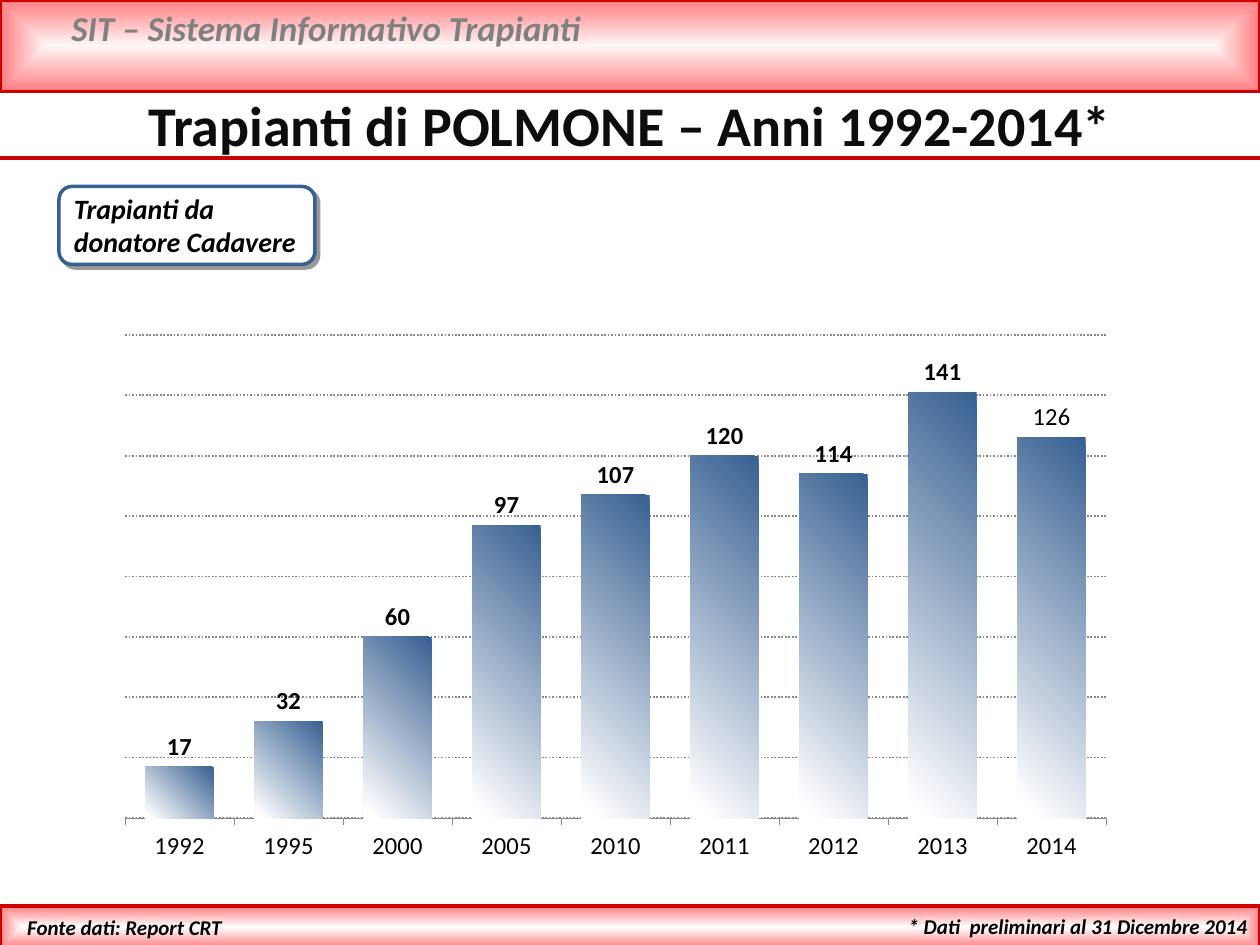
import pptx
import pptx.chart.data
import pptx.dml.color
import pptx.enum.chart
import pptx.enum.dml
import pptx.enum.shapes
import pptx.enum.text
import pptx.oxml
import pptx.oxml.ns
import pptx.util
from pptx.util import Cm, Pt

RGBColor = pptx.dml.color.RGBColor
WHITE = RGBColor(0xFF, 0xFF, 0xFF)
PALE_PINK = RGBColor(0xFF, 0xF6, 0xF6)
PINK = RGBColor(0xFF, 0x7C, 0x80)
RED = RGBColor(0xCC, 0x00, 0x00)
GREY = RGBColor(0x80, 0x80, 0x80)
AXIS_GREY = RGBColor(0x88, 0x88, 0x88)
BLACK = RGBColor(0x00, 0x00, 0x00)
TITLE_BLACK = RGBColor(0x0D, 0x0D, 0x0D)
BLUE = RGBColor(0x37, 0x60, 0x92)

FONT = "Calibri"
ALIGN = pptx.enum.text.PP_ALIGN
SHAPE = pptx.enum.shapes.MSO_SHAPE
WIDTH, HEIGHT = 25.4, 19.05

# left, top, width, height in cm; inner colour
BANDS = [
    ((0, 0, WIDTH, 1.85), PALE_PINK),
    ((0, 18.26, WIDTH, 0.86), WHITE),
]
# text, box in cm, size, colour, italic, alignment
TEXTS = [
    ("SIT – Sistema Informativo Trapianti", (1.19, 0, 22.81, 1.12), 20, GREY, True, ALIGN.LEFT),
    ("* Dati  preliminari al 31 Dicembre 2014", (14.91, 18.29, 10.49, 0.76), 12, BLACK, True, ALIGN.RIGHT),
    ("Fonte dati: Report CRT", (0.3, 18.31, 8.15, 0.76), 12, BLACK, True, ALIGN.LEFT),
    ("Trapianti di POLMONE – Anni 1992-2014*", (0, 1.7, WIDTH, 1.63), 32, TITLE_BLACK, False, ALIGN.CENTER),
    ("Trapianti da donatore Cadavere", (1.24, 3.73, 5.13, 1.63), 16, BLACK, True, ALIGN.LEFT),
]
RULE_TOP = 3.18
LABEL_FRAME = (1.19, 3.76, 5.16, 1.57)
CHART_BOX = (2.11, 6.53, 20.6, 11.07)
PLOT_AREA = {"x": 0.02, "y": 0.02, "w": 0.96, "h": 0.88}
TRANSPLANTS = {
    "1992": 17, "1995": 32, "2000": 60, "2005": 97, "2010": 107,
    "2011": 120, "2012": 114, "2013": 141, "2014": 126,
}


def in_cm(box):
    return [Cm(length) for length in box]


def element(xml, prefix="a"):
    """Parse one element, declaring its namespace prefix."""
    tag, rest = xml[1:].split(" ", 1)
    return pptx.oxml.parse_xml(f"<{tag} {pptx.oxml.ns.nsdecls(prefix)} {rest}")


def set_gradient(fill, stops):
    fill.gradient()
    for stop, (position, color) in zip(fill.gradient_stops, stops):
        stop.position = position
        stop.color.rgb = color


def set_line(line, color, width):
    line.color.rgb = color
    line.width = Pt(width)


def add_band(slide, box, inner_color):
    band = slide.shapes.add_shape(SHAPE.RECTANGLE, *in_cm(box))
    band.shadow.inherit = False
    set_gradient(band.fill, [(0, inner_color), (1, PINK)])
    linear = band._element.spPr.find(".//" + pptx.oxml.ns.qn("a:lin"))
    linear.getparent().replace(linear, element(
        '<a:path path="shape"><a:fillToRect l="50000" t="50000" r="50000" b="50000"/></a:path>'))
    set_line(band.line, RED, 2)


def add_rule(slide):
    rule = slide.shapes.add_connector(
        pptx.enum.shapes.MSO_CONNECTOR.STRAIGHT, *in_cm((0, RULE_TOP, WIDTH, RULE_TOP)))
    set_line(rule.line, RED, 2)
    rule._element.spPr.append(element("<a:effectLst />"))


def add_label_frame(slide):
    frame = slide.shapes.add_shape(SHAPE.ROUNDED_RECTANGLE, *in_cm(LABEL_FRAME))
    frame.fill.solid()
    frame.fill.fore_color.rgb = WHITE
    set_line(frame.line, BLUE, 2)
    frame._element.spPr.append(element(
        f'<a:effectLst ><a:outerShdw blurRad="0" dist="{Pt(3)}" dir="2700000" algn="tl" rotWithShape="0">'
        '<a:srgbClr val="000000"><a:alpha val="40000"/></a:srgbClr></a:outerShdw></a:effectLst>'))


def add_text(slide, text, box, size, color, italic, alignment):
    text_frame = slide.shapes.add_textbox(*in_cm(box)).text_frame
    text_frame.word_wrap = True
    text_frame.auto_size = pptx.enum.text.MSO_AUTO_SIZE.SHAPE_TO_FIT_TEXT
    paragraph = text_frame.paragraphs[0]
    paragraph.alignment = alignment
    run = paragraph.add_run()
    run.text = text
    set_font(run.font, size, color, True)
    run.font.italic = italic


def set_font(font, size, color, bold):
    font.name = FONT
    font.size = Pt(size)
    font.color.rgb = color
    font.bold = bold


def add_transplant_chart(slide):
    data = pptx.chart.data.CategoryChartData()
    data.categories = list(TRANSPLANTS)
    data.add_series("Trapianti", list(TRANSPLANTS.values()))
    chart = slide.shapes.add_chart(
        pptx.enum.chart.XL_CHART_TYPE.COLUMN_CLUSTERED, *in_cm(CHART_BOX), data).chart
    chart.has_legend = False
    chart.has_title = False
    set_font(chart.font, 10, BLACK, False)
    format_axes(chart)
    format_columns(chart.plots[0])
    place_plot_area(chart)


def format_axes(chart):
    tick_mark = pptx.enum.chart.XL_TICK_MARK
    category_axis = chart.category_axis
    category_axis.major_tick_mark = tick_mark.OUTSIDE
    category_axis.minor_tick_mark = tick_mark.NONE
    set_font(category_axis.tick_labels.font, 14, BLACK, False)
    set_line(category_axis.format.line, AXIS_GREY, 0.5)
    value_axis = chart.value_axis
    value_axis.minimum_scale, value_axis.maximum_scale = 0, 160
    value_axis.major_unit = 20
    value_axis.has_major_gridlines = True
    grid_line = value_axis.major_gridlines.format.line
    set_line(grid_line, AXIS_GREY, 1)
    grid_line.dash_style = pptx.enum.dml.MSO_LINE.ROUND_DOT
    value_axis.visible = False


def format_columns(plot):
    plot.gap_width = 60
    plot.overlap = -20
    plot.vary_by_categories = False
    series = plot.series[0]
    set_gradient(series.format.fill, [(0, BLUE), (0.96, WHITE)])
    series.format.fill.gradient_angle = 225
    labels = series.data_labels
    labels.show_value = True
    last_label = series.points[len(TRANSPLANTS) - 1].data_label
    for label, bold in ((labels, True), (last_label, False)):
        set_font(label.font, 14, BLACK, bold)
        label.position = pptx.enum.chart.XL_LABEL_POSITION.OUTSIDE_END


def place_plot_area(chart):
    plot_area = chart._chartSpace.chart.plotArea
    for layout in plot_area.findall(pptx.oxml.ns.qn("c:layout")):
        plot_area.remove(layout)
    modes = '<c:layoutTarget val="inner"/><c:xMode val="edge"/><c:yMode val="edge"/>'
    sizes = "".join(f'<c:{name} val="{share}"/>' for name, share in PLOT_AREA.items())
    plot_area.insert(0, element(
        f"<c:layout ><c:manualLayout>{modes}{sizes}</c:manualLayout></c:layout>", "c"))


def main():
    presentation = pptx.Presentation()
    presentation.slide_width, presentation.slide_height = Cm(WIDTH), Cm(HEIGHT)
    slide = presentation.slides.add_slide(presentation.slide_layouts[6])
    for band in BANDS:
        add_band(slide, *band)
    add_rule(slide)
    add_label_frame(slide)
    add_transplant_chart(slide)
    for text in TEXTS:
        add_text(slide, *text)
    presentation.save("out.pptx")


if __name__ == "__main__":
    main()
